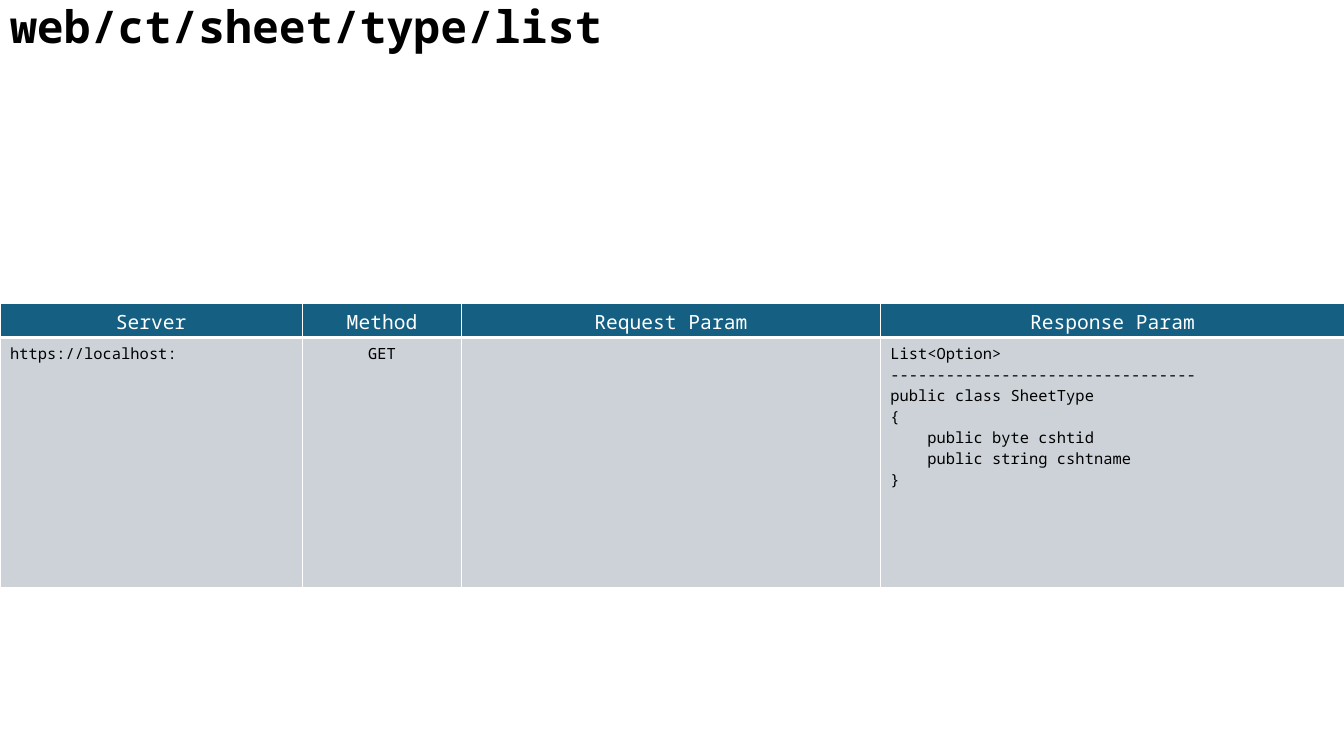
from lxml import etree
from pptx import Presentation
from pptx.dml.color import RGBColor
from pptx.enum.text import MSO_ANCHOR, MSO_AUTO_SIZE, PP_ALIGN
from pptx.oxml.ns import qn
from pptx.util import Inches, Pt

LEFT, MID = PP_ALIGN.LEFT, PP_ALIGN.CENTER
TOP = MSO_ANCHOR.TOP
NO_FIT = MSO_AUTO_SIZE.NONE
FONT = "Noto Sans Mono"
BLACK, WHITE, TEAL, GREY = "000000", "FFFFFF", "156082", "CCD2D8"

HEADS = ["Server", "Method", "Request Param", "Response Param"]
REPLY = """List<Option>
---------------------------------
public class SheetType
{
    public byte cshtid
    public string cshtname
}"""
CALL = ["https://localhost:", "GET", "", REPLY]
WIDTHS = [3, 1.58, 4.15, 4.61]


def paint(code):
    """Turn a hex string into a colour."""
    return RGBColor.from_string(code)


class Page:
    """Holds the font and the current slide."""

    def __init__(self, deck, font):
        """Add a title-only slide to the deck."""
        self.slide = deck.slides.add_slide(deck.slide_layouts[5])
        self.font = font

    def label(self, frame, text, size, color, align=LEFT, bold=False):
        """Fill a text frame and format its runs."""
        frame.text = text
        for para in frame.paragraphs:
            para.alignment = align
            for run in para.runs:
                run.font.name = self.font
                run.font.size = Pt(size)
                run.font.bold = bold
                run.font.color.rgb = paint(color)

    def title(self, text, left, top, width, height):
        """Place and format the slide title."""
        shape = self.slide.shapes.title
        shape.left, shape.top = Inches(left), Inches(top)
        shape.width, shape.height = Inches(width), Inches(height)
        frame = shape.text_frame
        frame.word_wrap = True
        frame.auto_size = NO_FIT
        frame.vertical_anchor = TOP
        self.label(frame, text, 32, BLACK, bold=True)
        frame.paragraphs[0].line_spacing = 0.9

    def edge(self, cell, base):
        """Draw white cell borders with the given base width."""
        props = cell._tc.get_or_add_tcPr()
        for side, width in zip("LRTB", (1, 1, 1, base)):
            line = etree.SubElement(props, qn(f"a:ln{side}"), w=str(Pt(width)))
            fill = etree.SubElement(line, qn("a:solidFill"))
            etree.SubElement(fill, qn("a:srgbClr"), val=WHITE)

    def cell(self, cell, text, size, color, fill, align, base):
        """Fill and format one table cell."""
        self.edge(cell, base)
        cell.fill.solid()
        cell.fill.fore_color.rgb = paint(fill)
        cell.vertical_anchor = TOP
        self.label(cell.text_frame, text, size, color, align)

    def table(self, left, top, widths, heights):
        """Add a plain table with the given column and row sizes."""
        grid = self.slide.shapes.add_table(
            len(heights), len(widths), Inches(left), Inches(top),
            Inches(sum(widths)), Inches(sum(heights))).table
        grid.first_row = True
        grid.horz_banding = False
        for col, width in zip(grid.columns, widths):
            col.width = Inches(width)
        for row, height in zip(grid.rows, heights):
            row.height = Inches(height)
        return grid


def main():
    """Build the slide and save it."""
    deck = Presentation()
    deck.slide_width, deck.slide_height = Inches(13.33), Inches(7.5)
    page = Page(deck, FONT)
    page.title("web/ct/sheet/type/list", 0, 0, 9.45, 0.64)
    grid = page.table(0, 3.01, WIDTHS, [0.34, 2.48])
    for col, (head, text) in enumerate(zip(HEADS, CALL)):
        top = grid.cell(0, col)
        page.cell(top, head, 14, WHITE, TEAL, MID, 3)
        top.margin_bottom = Inches(0.02)
        align = MID if head == "Method" else LEFT
        page.cell(grid.cell(1, col), text, 11, BLACK, GREY, align, 1)
    deck.save("out.pptx")


if __name__ == "__main__":
    main()
